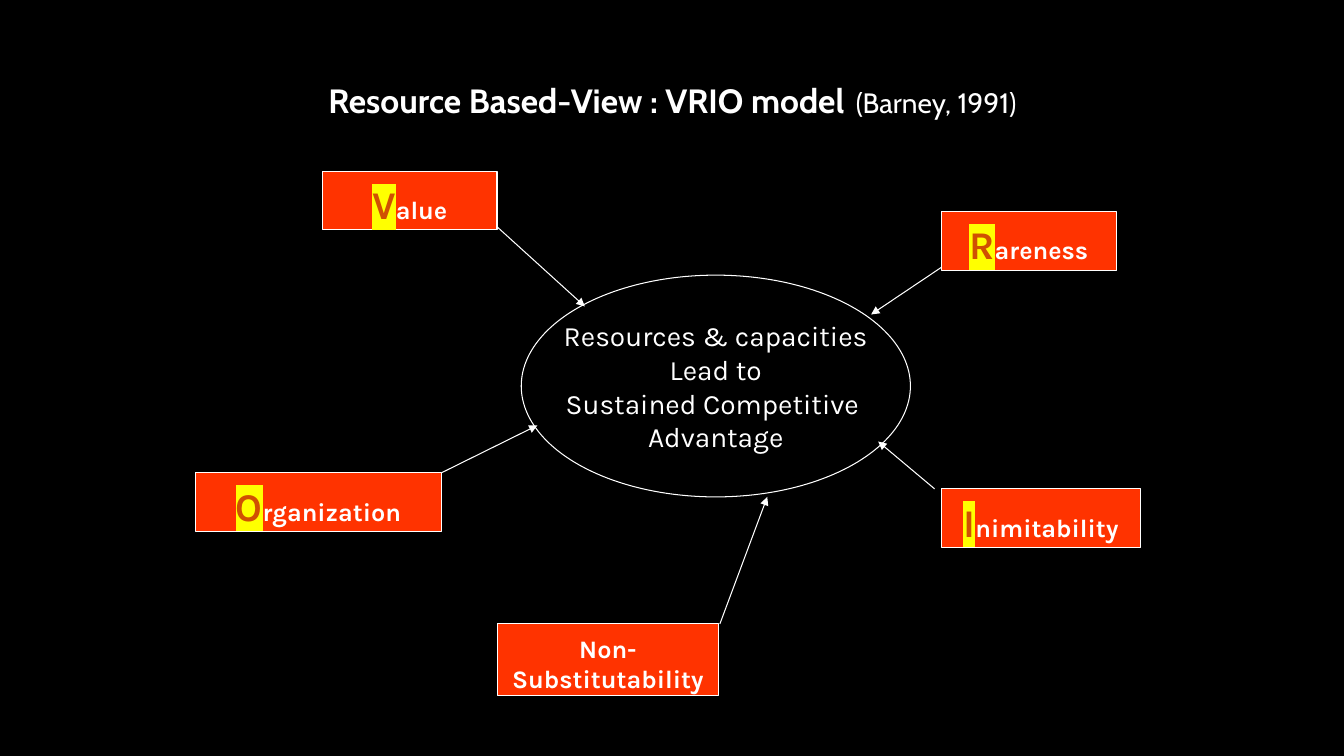
from lxml import etree
from pptx import Presentation
from pptx import util as u
from pptx.dml.color import RGBColor
from pptx.enum import shapes, text
from pptx.oxml.ns import qn

COLUMNS, ROWS = 133.3, 75
CELL = u.Inches(0.1)
BLACK, WHITE, RED, ORANGE, YELLOW = "000000", "FFFFFF", "FF3300", "D05002", "FFFF00"

# initial, rest of the word, box (left, top, width, height), arrow start, arrow end
FACTORS = [
    ("V", "alue", (32, 17, 17.3, 5.8), (49.3, 22.5), (58, 30.4)),
    ("R", "areness", (93.4, 21, 17.3, 5.8), (93.4, 26.5), (86.4, 31.2)),
    ("I", "nimitability", (93.4, 48.5, 19.7, 5.8), (92.7, 48.5), (87.1, 43.8)),
    ("", "Non-Substitutability", (49.3, 61.9, 22, 7.1), (71.4, 61.9), (76.1, 49.3)),
    ("O", "rganization", (19.4, 46.9, 24.4, 5.8), (43.8, 46.9), (53.3, 42.2)),
]


def cells(*counts):
    """Turn counts of grid cells into lengths."""
    return [u.Emu(round(count * CELL)) for count in counts]


def rgb(value):
    return RGBColor.from_string(value)


def add_run(paragraph, words, size, font="Karla", color=WHITE, bold=False):
    run = paragraph.add_run()
    run.text = words
    run.font.size = u.Pt(size)
    run.font.name = font
    run.font.bold = bold
    run.font.color.rgb = rgb(color)
    return run


def highlight(run, color):
    mark = etree.Element(qn("a:highlight"))
    etree.SubElement(mark, qn("a:srgbClr"), val=color)
    run.font._element.find(qn("a:solidFill")).addnext(mark)


def add_outlined(slide, kind, box, fill):
    shape = slide.shapes.add_shape(kind, *cells(*box))
    shape.shadow.inherit = False
    shape.fill.solid()
    shape.fill.fore_color.rgb = rgb(fill)
    shape.line.color.rgb = rgb(WHITE)
    shape.line.width = u.Pt(0.75)
    return shape


def add_title(slide):
    frame = slide.shapes.add_textbox(*cells(21.7, 3, 90, 12.5)).text_frame
    frame.word_wrap = True
    frame.vertical_anchor = text.MSO_ANCHOR.MIDDLE
    paragraph = frame.paragraphs[0]
    paragraph.alignment = text.PP_ALIGN.CENTER
    add_run(paragraph, "Resource Based-View : VRIO model", 24, "Cabin", bold=True)
    add_run(paragraph, " ", 36, "Cabin")
    add_run(paragraph, "(Barney, 1991)", 20, "Cabin")


def add_outcome(slide):
    shape = add_outlined(slide, shapes.MSO_SHAPE.OVAL, (51.7, 27.3, 38.6, 22), BLACK)
    frame = shape.text_frame
    frame.word_wrap = False
    frame.vertical_anchor = text.MSO_ANCHOR.MIDDLE
    frame.text = "Resources & capacities\nLead to\nSustained Competitive \nAdvantage"
    for paragraph in frame.paragraphs:
        paragraph.alignment = text.PP_ALIGN.CENTER
        font = paragraph.runs[0].font
        font.size = u.Pt(20)
        font.name = "Karla"
        font.color.rgb = rgb(WHITE)


def add_factor(slide, initial, rest, box):
    frame = add_outlined(slide, shapes.MSO_SHAPE.RECTANGLE, box, RED).text_frame
    frame.word_wrap = True
    frame.vertical_anchor = text.MSO_ANCHOR.TOP
    frame.margin_top, frame.margin_bottom = cells(0.9, 0.2)
    paragraph = frame.paragraphs[0]
    paragraph.alignment = text.PP_ALIGN.CENTER
    if initial:
        highlight(add_run(paragraph, initial, 28, color=ORANGE, bold=True), YELLOW)
    add_run(paragraph, rest, 18, bold=True)


def add_arrow(slide, start, end):
    arrow = slide.shapes.add_connector(
        shapes.MSO_CONNECTOR.STRAIGHT, *cells(*start, *end))
    arrow.line.color.rgb = rgb(WHITE)
    arrow.line.width = u.Pt(0.75)
    etree.SubElement(arrow.line._get_or_add_ln(), qn("a:tailEnd"), type="triangle")
    etree.SubElement(arrow._element.spPr, qn("a:effectLst"))


def main():
    presentation = Presentation()
    presentation.slide_width, presentation.slide_height = cells(COLUMNS, ROWS)
    slide = presentation.slides.add_slide(presentation.slide_layouts[6])
    slide.background.fill.solid()
    slide.background.fill.fore_color.rgb = rgb(BLACK)

    add_title(slide)
    add_outcome(slide)
    for initial, rest, box, _, _ in FACTORS:
        add_factor(slide, initial, rest, box)
    for *_, start, end in FACTORS:
        add_arrow(slide, start, end)
    presentation.save("out.pptx")


if __name__ == "__main__":
    main()
